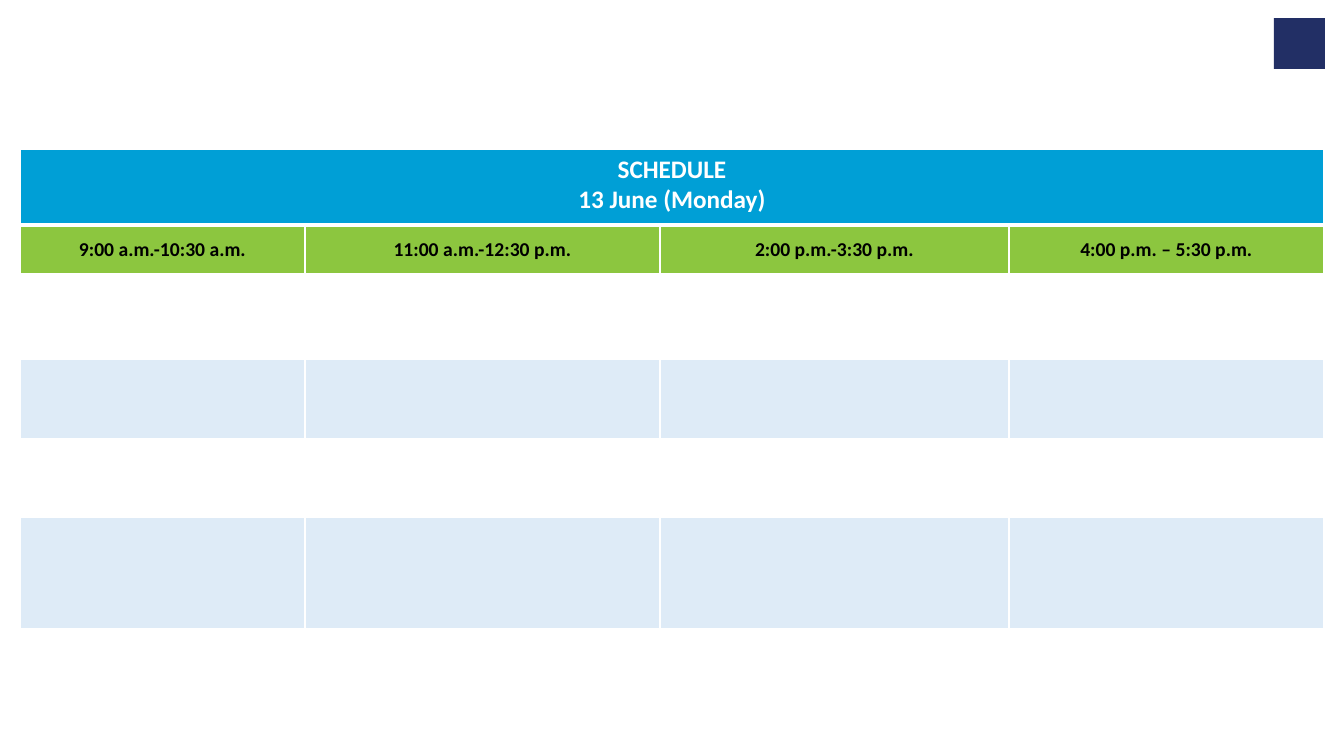
from lxml.etree import SubElement
from pptx import Presentation
from pptx.dml.color import RGBColor as Rgb
from pptx.enum.shapes import MSO_SHAPE as Shape
from pptx.enum.text import MSO_ANCHOR as Anchor, PP_ALIGN as Align
from pptx.oxml.ns import qn
from pptx.util import Emu, Pt

COLOURS = {
    "navy": "222F65",
    "blue": "009FD6",
    "green": "8CC63F",
    "pale": "DEEBF7",
    "white": "FFFFFF",
    "black": "000000",
}
HEADING = ["SCHEDULE", "13 June (Monday)"]
SESSIONS = [
    "9:00 a.m.-10:30 a.m.",
    "11:00 a.m.-12:30 p.m.",
    "2:00 p.m.-3:30 p.m.",
    "4:00 p.m. – 5:30 p.m.",
]
COLUMN_WIDTHS = [285, 355, 349, 315]
ROW_HEIGHTS = [76, 49, 85, 80, 79, 111, 105]
ROW_FILLS = ["blue", "green", "white", "pale", "white", "pale", "white"]


def px(length):
    return Emu(round(length * 914400 / 100.8))


def colour(name):
    return Rgb.from_string(COLOURS[name])


class Page:
    font = "Calibri"

    def __init__(self, deck):
        self.slide = deck.slides.add_slide(deck.slide_layouts[6])

    def block(self, left, top, width, height, fill):
        box = self.slide.shapes.add_shape(
            Shape.RECTANGLE, px(left), px(top), px(width), px(height))
        box.shadow.inherit = False
        box.fill.solid()
        box.fill.fore_color.rgb = colour(fill)
        box.line.fill.background()

    def table(self, left, top, widths, heights):
        frame = self.slide.shapes.add_table(
            len(heights), len(widths), px(left), px(top),
            px(sum(widths)), px(sum(heights)))
        table = frame.table
        table.first_row = False
        table.horz_banding = False
        for column, width in zip(table.columns, widths):
            column.width = px(width)
        for row, height in zip(table.rows, heights):
            row.height = px(height)
        return table

    def style_cell(self, cell, fill, top_line=1, bottom_line=1):
        properties = cell._tc.get_or_add_tcPr()
        lines = {"lnL": 1, "lnR": 1, "lnT": top_line, "lnB": bottom_line}
        for side, width in lines.items():
            line = SubElement(properties, qn(f"a:{side}"), w=str(Pt(width)))
            solid = SubElement(line, qn("a:solidFill"))
            SubElement(solid, qn("a:srgbClr"), val=COLOURS["white"])
        cell.fill.solid()
        cell.fill.fore_color.rgb = colour(fill)

    def label_cell(self, cell, lines, size, ink, anchor):
        cell.vertical_anchor = anchor
        cell.text = "\n".join(lines)
        for para in cell.text_frame.paragraphs:
            para.alignment = Align.CENTER
            para.font.name = self.font
            para.font.size = Pt(size)
            para.font.bold = True
            para.font.color.rgb = colour(ink)


def main():
    deck = Presentation()
    deck.slide_width, deck.slide_height = px(1344), px(756)
    page = Page(deck)
    page.block(1274, 18, 51, 51, "navy")

    schedule = page.table(20, 149, COLUMN_WIDTHS, ROW_HEIGHTS)
    for index, fill in enumerate(ROW_FILLS):
        for cell in schedule.rows[index].cells:
            page.style_cell(cell, fill,
                            top_line=3 if index == 1 else 1,
                            bottom_line=3 if index == 0 else 1)

    heading = schedule.cell(0, 0)
    heading.merge(schedule.cell(0, len(COLUMN_WIDTHS) - 1))
    page.label_cell(heading, HEADING, 18, "white", Anchor.TOP)
    for cell, session in zip(schedule.rows[1].cells, SESSIONS):
        page.label_cell(cell, [session], 14, "black", Anchor.MIDDLE)

    deck.save("out.pptx")


if __name__ == "__main__":
    main()
